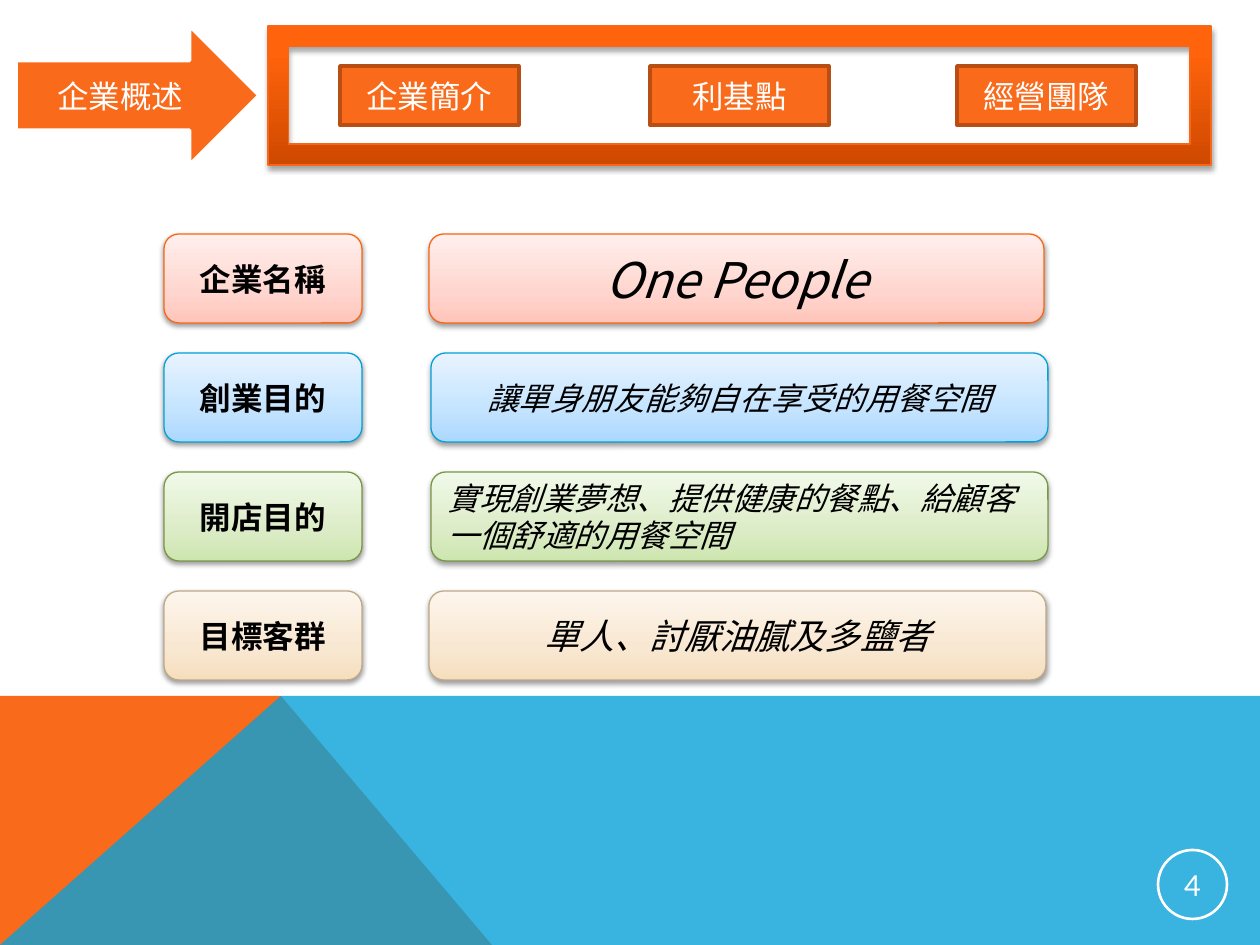
import lxml.etree
import pptx
import pptx.dml.color
import pptx.enum.shapes
import pptx.enum.text
import pptx.oxml.ns
import pptx.util

PX = 914400 / 126
SHAPE = pptx.enum.shapes.MSO_SHAPE
ALIGN = pptx.enum.text.PP_ALIGN
qn = pptx.oxml.ns.qn
rgb = pptx.dml.color.RGBColor.from_string

ORANGE, BLUE, WHITE, BLACK = "F96A1B", "08A1D9", "FFFFFF", "000000"
LATO, NOTO = "Lato", "Noto Sans CJK JP"


def add_box(kind, box, fill=None, line=WHITE, width=2, shadow=None):
    """fill: hex string, list of (percent, hex) from bottom to top, or None; shadow: (alpha %, distance pt)."""
    shape = slide.shapes.add_shape(kind, *(round(value * PX) for value in box))
    shape.shadow.inherit = False
    shape.line.color.rgb = rgb(line)
    shape.line.width = pptx.util.Pt(width)
    properties = shape._element.spPr
    if fill is None:
        shape.fill.background()
    elif isinstance(fill, str):
        shape.fill.solid()
        shape.fill.fore_color.rgb = rgb(fill)
    else:
        shape.fill.gradient()
        shape.fill.gradient_angle = 90
        stops = properties.find(".//" + qn("a:gsLst"))
        stops[:] = []
        for percent, color in fill:
            stop = lxml.etree.SubElement(stops, qn("a:gs"), pos=str(percent * 1000))
            lxml.etree.SubElement(stop, qn("a:srgbClr"), val=color)
    if shadow:
        alpha, distance = shadow
        outer = lxml.etree.SubElement(
            properties.find(qn("a:effectLst")), qn("a:outerShdw"),
            blurRad=str(pptx.util.Pt(3.1)), dist=str(pptx.util.Pt(distance)),
            dir="5400000", rotWithShape="0")
        color = lxml.etree.SubElement(outer, qn("a:srgbClr"), val=BLACK)
        lxml.etree.SubElement(color, qn("a:alpha"), val=str(alpha * 1000))
    return shape


def write(shape, text, color=WHITE, align=ALIGN.CENTER, **formats):
    shape.text_frame.vertical_anchor = pptx.enum.text.MSO_ANCHOR.MIDDLE
    paragraph = shape.text_frame.paragraphs[0]
    paragraph.alignment = align
    run = paragraph.add_run()
    run.text = text
    run.font.color.rgb = rgb(color)
    for name, value in ({"name": LATO, "size": pptx.util.Pt(18)} | formats).items():
        setattr(run.font, name, value)
    lxml.etree.SubElement(run._r.rPr, qn("a:ea"), typeface=NOTO)


presentation = pptx.Presentation()
presentation.slide_width = round(1260 * PX)
presentation.slide_height = round(945 * PX)
slide = presentation.slides.add_slide(presentation.slide_layouts[6])

# Bottom band: orange triangle under a translucent blue area
bands = [
    (ORANGE, 100, [(0, 945), (0, 696), (281, 696), (492, 945)]),
    (BLUE, 80, [(0, 945), (281, 696), (1260, 696), (1260, 945)]),
]
for color, opacity, points in bands:
    builder = slide.shapes.build_freeform(*points[0], scale=PX)
    builder.add_line_segments(points[1:], close=True)
    band = builder.convert_to_shape()
    band.shadow.inherit = False
    band.fill.solid()
    band.fill.fore_color.rgb = rgb(color)
    band.line.fill.background()
    if opacity < 100:
        fill_color = band._element.spPr.find(qn("a:solidFill"))[0]
        lxml.etree.SubElement(fill_color, qn("a:alpha"), val=str(opacity * 1000))

page_number = add_box(SHAPE.OVAL, (1158, 850, 69, 69), width=1.5)
for side in ("left", "top", "right", "bottom"):
    setattr(page_number.text_frame, "margin_" + side, round(PX))
write(page_number, "4", size=pptx.util.Pt(16.5))

# Header: section arrow and framed topics
write(add_box(SHAPE.RIGHT_ARROW, (16, 26, 243, 139), ORANGE), "企業概述")
frame = add_box(SHAPE.FRAME, (268, 26, 943, 139),
                [(0, "CE4900"), (80, "FF630C"), (100, "FF640E")],
                "F96615", 0.75, (35, 1.8))
frame.adjustments[0] = 0.15
for left, topic in [(340, "企業簡介"), (650, "利基點"), (957, "經營團隊")]:
    write(add_box(SHAPE.RECTANGLE, (left, 66, 179, 59), ORANGE, "B84E14"), topic)

# Rows: label, detail, left and width of the detail, size, alignment, line, gradient colours
rows = [
    ("企業名稱", "One People", 429, 615, 28, ALIGN.CENTER,
     "F96615", ("FFC5BA", "FFD6CF", "FFEFED")),
    ("創業目的", "讓單身朋友能夠自在享受的用餐空間", 431, 617, 18, ALIGN.CENTER,
     "03A0D9", ("ABD8FF", "C3E3FF", "E8F4FF")),
    ("開店目的", "實現創業夢想、提供健康的餐點、給顧客一個舒適的用餐空間", 431, 617, 18, ALIGN.LEFT,
     "7A9746", ("CDE6AF", "DCECC7", "F1F9E9")),
    ("目標客群", "單人、討厭油膩及多鹽者", 429, 617, 20, ALIGN.CENTER,
     "BFA989", ("F6DEBD", "F8E7D1", "FDF6EC")),
]
for index, (label, detail, left, width, size, align, line, colors) in enumerate(rows):
    top = 234 + 119 * index
    style = (list(zip((0, 35, 100), colors)), line, 0.75, (38, 1.6))
    label_box = add_box(SHAPE.ROUNDED_RECTANGLE, (164, top, 198, 89), *style)
    write(label_box, label, BLACK, bold=True)
    detail_box = add_box(SHAPE.ROUNDED_RECTANGLE, (left, top, width, 89), *style)
    write(detail_box, detail, BLACK, align, name=NOTO, size=pptx.util.Pt(size), italic=True)

presentation.save("out.pptx")
